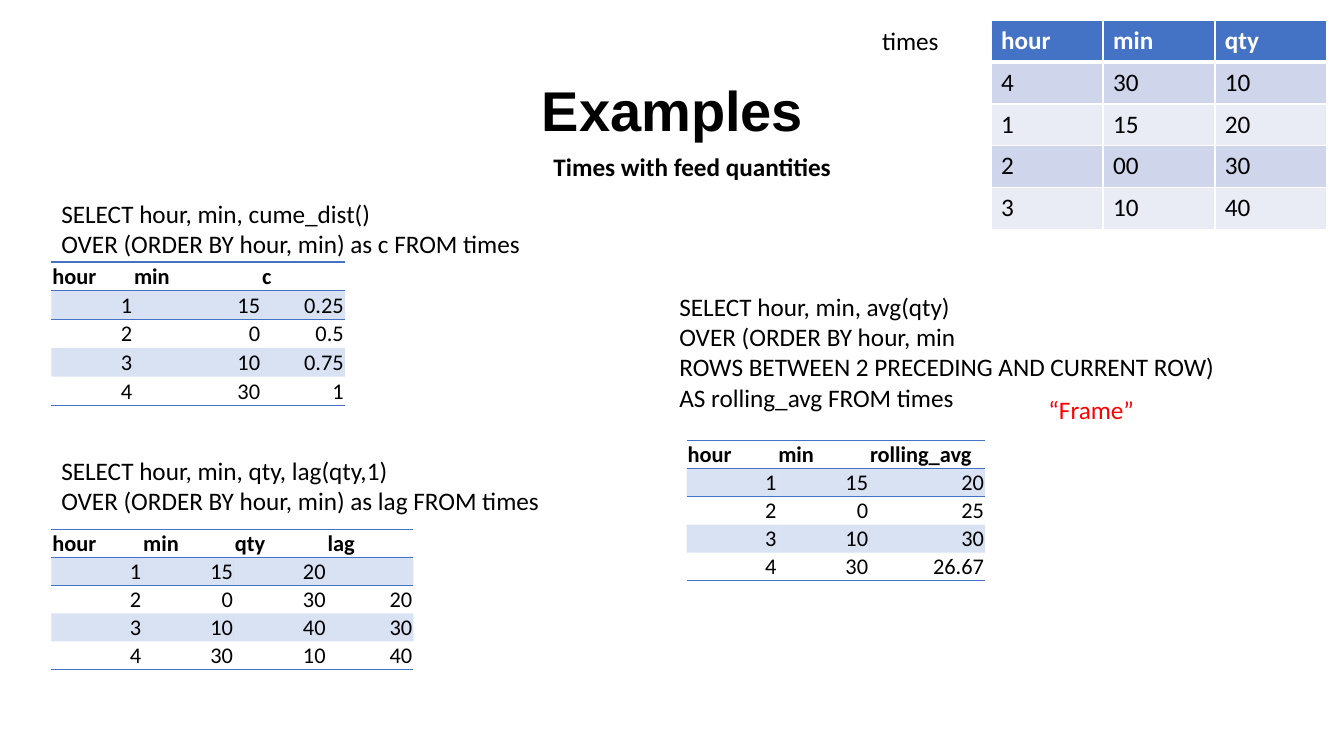
import pptx
import pptx.dml.color
import pptx.enum.text
import pptx.oxml.ns
import pptx.util
from lxml import etree

PX = 9144  # EMU per px, 100 px to the inch
COLORS = {"ink": "000000", "paper": "FFFFFF", "blue": "4472C4",
          "band_dark": "CFD5EA", "band_light": "E9EBF5", "frame": "FF0000"}
NO_STYLE = "{2D5ABB26-0587-4C30-8999-92F81FD0307C}"
ALIGN = pptx.enum.text.PP_ALIGN
ANCHOR = pptx.enum.text.MSO_ANCHOR
qn = pptx.oxml.ns.qn


def px(*lengths):
    return [pptx.util.Emu(round(length * PX)) for length in lengths]


def write(frame, text, size=18, font="Calibri", color="ink", bold=False,
          align=ALIGN.LEFT, spacing=None):
    """Fill a text frame, one paragraph per line of text."""
    for number, line in enumerate(text.split("\n")):
        paragraph = frame.add_paragraph() if number else frame.paragraphs[0]
        paragraph.alignment = align
        paragraph.line_spacing = spacing
        if not line:  # an empty cell keeps the row height of its size
            etree.SubElement(paragraph._p, qn("a:endParaRPr"), sz=str(size * 100))
            continue
        run = paragraph.add_run()
        run.text = line
        run.font.name, run.font.size = font, pptx.util.Pt(size)
        run.font.bold = bold
        run.font.color.rgb = pptx.dml.color.RGBColor.from_string(COLORS[color])


def add_label(slide, box, text, **style):
    frame = slide.shapes.add_textbox(*px(*box)).text_frame
    frame.word_wrap = True
    write(frame, text, **style)


def add_fill(parent, color, opacity=100):
    fill = etree.SubElement(parent, qn("a:solidFill"))
    rgb = etree.SubElement(fill, qn("a:srgbClr"), val=COLORS[color])
    if opacity < 100:
        etree.SubElement(rgb, qn("a:alpha"), val=str(opacity * 1000))


def add_border(cell, side, color, points=1):
    line = etree.SubElement(cell._tc.get_or_add_tcPr(), qn("a:ln" + side),
                            w=str(pptx.util.Pt(points)))
    add_fill(line, color)


def add_grid(slide, box, widths, rows):
    """Add an unstyled table with equal rows; return its cells by row."""
    table = slide.shapes.add_table(len(rows), len(widths), *px(*box)).table
    table.first_row = table.horz_banding = False
    table._tbl.tblPr.find(qn("a:tableStyleId")).text = NO_STYLE
    for column, width in zip(table.columns, widths):
        column.width = px(width)[0]
    for row in table.rows:
        row.height = px(box[3] / len(rows))[0]
    return [list(row.cells) for row in table.rows]


# The table being queried
def add_times_table(slide, box, rows):
    grid = add_grid(slide, box, [box[2] / 3] * 3, rows)
    for r, (cells, texts) in enumerate(zip(grid, rows)):
        header = r == 0
        for cell, text in zip(cells, texts):
            for side in "LRTB":
                thick = (header and side == "B") or (r == 1 and side == "T")
                add_border(cell, side, "paper", 3 if thick else 1)
            band = "band_dark" if r % 2 else "band_light"
            add_fill(cell._tc.tcPr, "blue" if header else band)
            write(cell.text_frame, text, bold=header,
                  color="paper" if header else "ink")


# The rows that a query returns
def add_result_table(slide, box, widths, rows):
    grid = add_grid(slide, (*box[:2], sum(widths), box[2]), widths, rows)
    for r, (cells, texts) in enumerate(zip(grid, rows)):
        header, last = r == 0, r == len(rows) - 1
        for cell, text in zip(cells, texts):
            cell.margin_left, cell.margin_right, cell.margin_top = px(1, 1, 1)
            cell.margin_bottom = 0
            cell.vertical_anchor = ANCHOR.BOTTOM
            if r <= 1:
                add_border(cell, "T", "blue")
            if header or last:
                add_border(cell, "B", "blue")
            if r % 2:
                add_fill(cell._tc.tcPr, "blue", opacity=20)
            write(cell.text_frame, text, size=16, bold=header,
                  align=ALIGN.LEFT if header else ALIGN.RIGHT)


def add_heading(slide, box):
    left, top, width, height = box
    title = slide.shapes.title
    title.left, title.top, title.width, title.height = px(*box)
    title.text_frame.auto_size = pptx.enum.text.MSO_AUTO_SIZE.NONE
    title.text_frame.vertical_anchor = ANCHOR.MIDDLE
    write(title.text_frame, "Examples", size=40, font="Arial", bold=True,
          align=ALIGN.CENTER, spacing=0.9)
    add_label(slide, (left + 447, top + 105, 381, 40),
              "Times with feed quantities", bold=True)


def add_times(slide, box):
    left, top, _, _ = box
    add_label(slide, (left - 118, top, 86, 40), "times")
    add_times_table(slide, box, [
        ("hour", "min", "qty"), ("4", "30", "10"), ("1", "15", "20"),
        ("2", "00", "30"), ("3", "10", "40")])


def add_query(slide, box, sql, table_offset, table_height, widths, rows):
    """Place a query with its result table below it."""
    left, top, _, _ = box
    dx, dy = table_offset
    add_label(slide, box, sql)
    add_result_table(slide, (left + dx, top + dy, table_height), widths, rows)


def main():
    deck = pptx.Presentation()
    deck.slide_width, deck.slide_height = px(1333, 750)
    slide = deck.slides.add_slide(deck.slide_layouts[5])

    add_heading(slide, (92, 40, 1150, 145))
    add_times(slide, (983, 20, 333, 208))

    # Cumulative distribution
    add_query(slide, (51, 192, 796, 71),
              "SELECT hour, min, cume_dist()\n"
              "OVER (ORDER BY hour, min) as c FROM times",
              (0, 68), 142, [81, 127, 83],
              [("hour", "min", "c"), ("1", "15", "0.25"), ("2", "0", "0.5"),
               ("3", "10", "0.75"), ("4", "30", "1")])

    # Lag by one row
    add_query(slide, (51, 447, 574, 71),
              "SELECT hour, min, qty, lag(qty,1)\n"
              "OVER (ORDER BY hour, min) as lag FROM times",
              (0, 78), 139, [90, 91, 92, 86],
              [("hour", "min", "qty", "lag"), ("1", "15", "20", ""),
               ("2", "0", "30", "20"), ("3", "10", "40", "30"),
               ("4", "30", "10", "40")])

    # Rolling average over a frame
    add_query(slide, (664, 284, 574, 131),
              "SELECT hour, min, avg(qty)\nOVER (ORDER BY hour, min\n"
              "ROWS BETWEEN 2 PRECEDING AND CURRENT ROW) "
              "AS rolling_avg FROM times",
              (17, 153), 139, [90, 91, 115],
              [("hour", "min", "rolling_avg"), ("1", "15", "20"),
               ("2", "0", "25"), ("3", "10", "30"), ("4", "30", "26.67")])
    add_label(slide, (1030, 386, 239, 40), "“Frame”", color="frame")

    deck.save("out.pptx")


if __name__ == "__main__":
    main()
